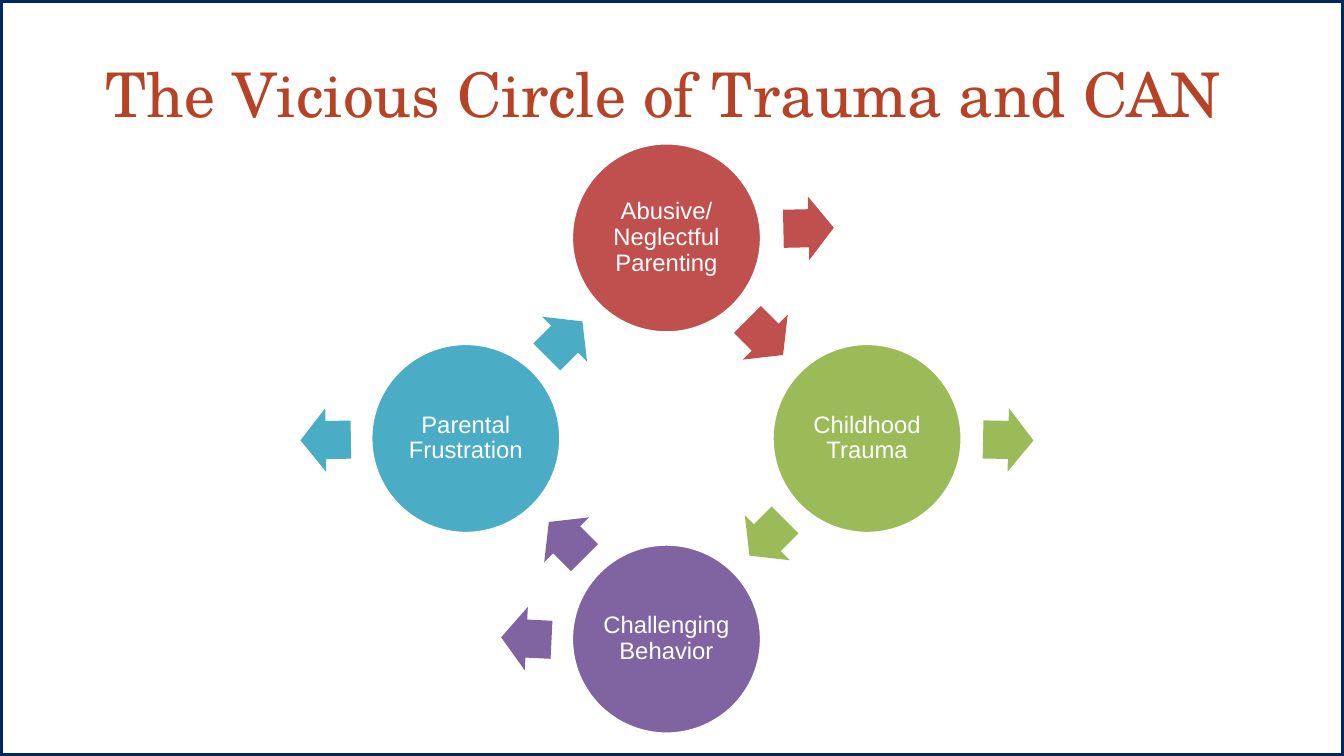
from pptx import Presentation
from pptx.dml.color import RGBColor
from pptx.enum.shapes import MSO_SHAPE
from pptx.enum.text import MSO_ANCHOR, PP_ALIGN
from pptx.util import Inches, Pt

COLORS = {
    "border": "002663",
    "title": "B64326",
    "white": "FFFFFF",
    "parenting": "C0504D",
    "trauma": "9BBB59",
    "behavior": "8064A2",
    "frustration": "4BACC6",
}
CENTER_X, CENTER_Y = 6.61, 4.35
RADIUS = 1.99
CIRCLE = 1.88
ARROW_WIDTH, ARROW_HEIGHT = 0.5, 0.63


def color(name):
    return RGBColor.from_string(COLORS[name])


def write_centered(shape, text, font_name, size, color_name):
    """Fill a shape with one centred line of text and return its paragraph."""
    frame = shape.text_frame
    frame.word_wrap = True
    frame.vertical_anchor = MSO_ANCHOR.MIDDLE
    paragraph = frame.paragraphs[0]
    paragraph.alignment = PP_ALIGN.CENTER
    run = paragraph.add_run()
    run.text = text
    run.font.name = font_name
    run.font.size = Pt(size)
    run.font.color.rgb = color(color_name)
    return paragraph


prs = Presentation()
prs.slide_width = Inches(13.33)
prs.slide_height = Inches(7.5)
slide = prs.slides.add_slide(prs.slide_layouts[6])

border = slide.shapes.add_shape(
    MSO_SHAPE.RECTANGLE, 0, 0, prs.slide_width, prs.slide_height)
border.shadow.inherit = False
border.fill.background()
border.line.color.rgb = color("border")
border.line.width = Pt(4.5)

title = slide.shapes.add_textbox(Inches(0.67), Inches(0.3), Inches(12), Inches(1.25))
write_centered(title, "The Vicious Circle of Trauma and CAN ",
               "TeX Gyre Schola", 44, "title")

# Label, colour, direction from the centre, then (left, top, rotation)
# of the arrow to the next stage and of the arrow leading outwards.
stages = [
    ("Abusive/ Neglectful Parenting", "parenting", (0, -1),
     (7.34, 3.03, 45), (7.77, 1.95, 358.8)),
    ("Childhood Trauma", "trauma", (1, 0),
     (7.36, 5.02, 135), (9.75, 4.05, 1.2)),
    ("Challenging Behavior", "behavior", (0, 1),
     (5.37, 5.04, 225), (4.97, 6.02, 182.8)),
    ("Parental Frustration", "frustration", (-1, 0),
     (5.35, 3.05, 315), (2.98, 4.05, 179.2)),
]

for label, stage_color, (dx, dy), *arrows in stages:
    stage = slide.shapes.add_shape(
        MSO_SHAPE.OVAL,
        Inches(CENTER_X + dx * RADIUS - CIRCLE / 2),
        Inches(CENTER_Y + dy * RADIUS - CIRCLE / 2),
        Inches(CIRCLE), Inches(CIRCLE))
    stage.shadow.inherit = False
    stage.fill.solid()
    stage.fill.fore_color.rgb = color(stage_color)
    stage.line.color.rgb = color("white")
    stage.line.width = Pt(2)
    frame = stage.text_frame
    frame.margin_left = frame.margin_right = Inches(0.02)
    frame.margin_top = frame.margin_bottom = Inches(0.02)
    write_centered(stage, label, "Arial", 17, "white").line_spacing = 0.9

    for left, top, rotation in arrows:
        arrow = slide.shapes.add_shape(
            MSO_SHAPE.RIGHT_ARROW, Inches(left), Inches(top),
            Inches(ARROW_WIDTH), Inches(ARROW_HEIGHT))
        arrow.shadow.inherit = False
        arrow.adjustments[0] = 0.6
        arrow.adjustments[1] = 0.5
        arrow.rotation = rotation
        arrow.fill.solid()
        arrow.fill.fore_color.rgb = color(stage_color)
        arrow.line.fill.background()

prs.save("out.pptx")
